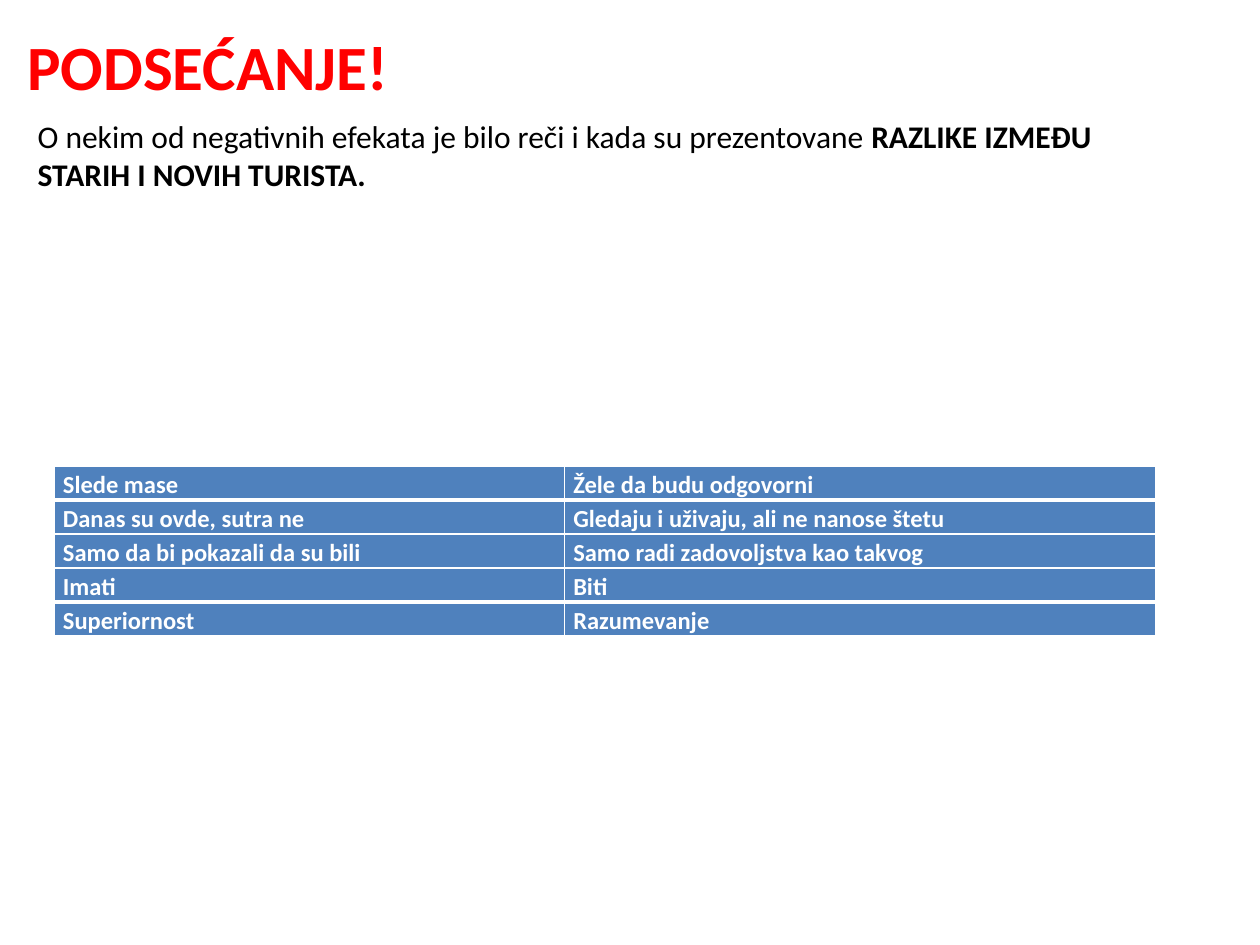
import pptx
import pptx.dml.color
import pptx.enum.text
import pptx.util
import lxml.etree
from pptx.oxml.ns import qn
from pptx.util import Inches

WHITE = "FFFFFF"


def add_run(p, text, size, color, bold=False):
    r = p.add_run()
    r.text = text
    r.font.name = "Calibri"
    r.font.size = pptx.util.Pt(size)
    r.font.bold = bold
    r.font.color.rgb = pptx.dml.color.RGBColor.from_string(color)


def add_border(cell, side, width):
    """Draw one white cell border; side is L, R, T or B, width is in points."""
    tc_pr = cell._tc.get_or_add_tcPr()
    ln = lxml.etree.SubElement(tc_pr, qn("a:ln" + side), w=str(pptx.util.Pt(width)))
    fill = lxml.etree.SubElement(ln, qn("a:solidFill"))
    lxml.etree.SubElement(fill, qn("a:srgbClr"), val=WHITE)


prs = pptx.Presentation()
prs.slide_width, prs.slide_height = Inches(10), Inches(7.5)
s = prs.slides.add_slide(prs.slide_layouts[6])

# Title
title = s.shapes.add_textbox(Inches(0.12), Inches(0.17), Inches(3.09), Inches(0.71))
title.text_frame.word_wrap = False
add_run(title.text_frame.paragraphs[0], "PODSEĆANJE!", 36, "FF0000", bold=True)

# Introduction
intro = s.shapes.add_textbox(Inches(0.2), Inches(0.88), Inches(9.21), Inches(0.71))
intro.text_frame.word_wrap = True
p = intro.text_frame.paragraphs[0]
add_run(p, "O nekim od negativnih efekata je bilo reči i kada su prezentovane ", 18, "000000")
add_run(p, "RAZLIKE IZMEĐU STARIH I NOVIH TURISTA.", 18, "000000", bold=True)

# Old tourists on the left, new tourists on the right
rows = [
    ("Slede mase", "Žele da budu odgovorni"),
    ("Danas su ovde, sutra ne", "Gledaju i uživaju, ali ne nanose štetu"),
    ("Samo da bi pokazali da su bili", "Samo radi zadovoljstva kao takvog"),
    ("Imati", "Biti"),
    ("Superiornost", "Razumevanje"),
]
thick_rules = (1, len(rows) - 1)  # below the first row and above the last
row_height = Inches(0.27)
table = s.shapes.add_table(len(rows), 2, Inches(0.43), Inches(3.7),
                           Inches(8.74), row_height * len(rows)).table
table.columns[0].width = Inches(4.05)
table.columns[1].width = Inches(4.69)

for i, texts in enumerate(rows):
    table.rows[i].height = row_height
    for j, text in enumerate(texts):
        cell = table.cell(i, j)
        cell.margin_left = cell.margin_right = Inches(0.07)
        cell.margin_top = cell.margin_bottom = 0
        for side in "LR":
            add_border(cell, side, 1)
        for side, rule in (("T", i), ("B", i + 1)):
            add_border(cell, side, 3 if rule in thick_rules else 1)
        cell.fill.solid()
        cell.fill.fore_color.rgb = pptx.dml.color.RGBColor.from_string("4F81BD")
        p = cell.text_frame.paragraphs[0]
        p.alignment = pptx.enum.text.PP_ALIGN.JUSTIFY
        p.line_spacing = 1.15
        add_run(p, text, 14, WHITE, bold=True)

prs.save("out.pptx")
